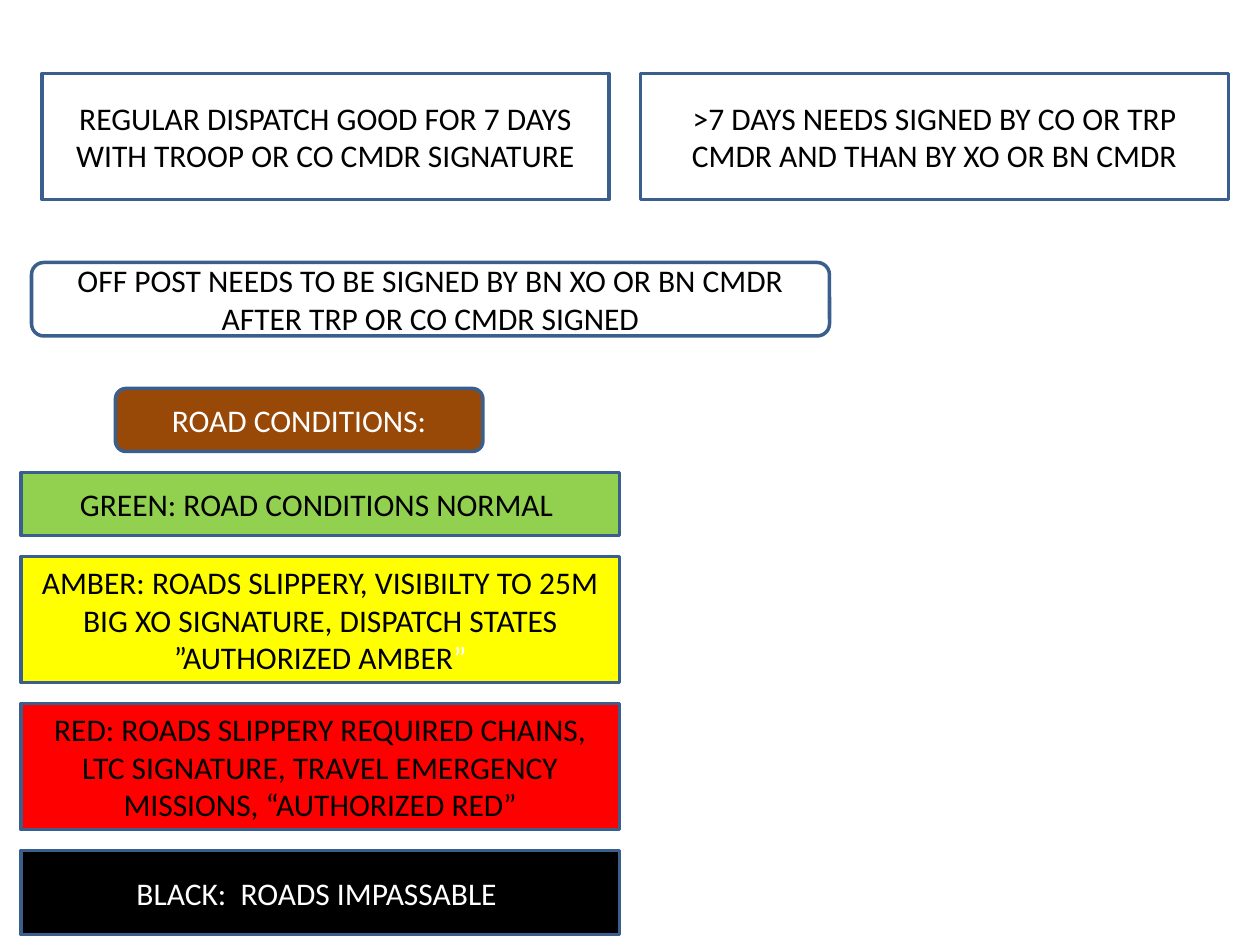
from dataclasses import dataclass
from typing import NamedTuple

from pptx import Presentation
from pptx.dml.color import RGBColor
from pptx.enum.shapes import MSO_SHAPE
from pptx.enum.text import MSO_ANCHOR, PP_ALIGN
from pptx.util import Emu, Pt

EMU_PER_PX = 9525  # 96 px to the inch


@dataclass(frozen=True)
class Theme:
    font: str = "Calibri"
    text_size: int = 18
    line_width: int = 2
    outline: str = "3A5F8C"
    white: str = "FFFFFF"
    black: str = "000000"
    brown: str = "984807"
    green: str = "92D050"
    amber: str = "FFFF00"
    red: str = "FF0000"


THEME = Theme()


class TextRun(NamedTuple):
    text: str
    color: str = THEME.black


Paragraphs = list[list[TextRun]]


class Box(NamedTuple):
    left: int
    top: int
    width: int
    height: int
    fill: str
    paragraphs: Paragraphs
    outline_shape: MSO_SHAPE = MSO_SHAPE.RECTANGLE


class RoadCondition(NamedTuple):
    height: int
    fill: str
    paragraphs: Paragraphs


DISPATCH_RULES = [
    Box(32, 56, 432, 96, THEME.white, [[TextRun(
        "REGULAR DISPATCH GOOD FOR 7 DAYS WITH TROOP OR CO CMDR SIGNATURE")]]),
    Box(488, 56, 448, 96, THEME.white, [[TextRun(
        ">7 DAYS NEEDS SIGNED BY CO OR TRP CMDR AND THAN BY XO OR BN CMDR")]]),
    Box(24, 200, 608, 56, THEME.white, [[TextRun(
        "OFF POST NEEDS TO BE SIGNED BY BN XO OR BN CMDR AFTER TRP OR CO CMDR SIGNED")]],
        MSO_SHAPE.ROUNDED_RECTANGLE),
]
ROAD_HEADING = Box(88, 296, 280, 48, THEME.brown,
                   [[TextRun("ROAD CONDITIONS:", THEME.white)]],
                   MSO_SHAPE.ROUNDED_RECTANGLE)

ROAD_CONDITIONS = [
    RoadCondition(48, THEME.green, [[TextRun("GREEN: ROAD CONDITIONS NORMAL ")]]),
    RoadCondition(96, THEME.amber, [
        [TextRun("AMBER: ROADS SLIPPERY, VISIBILTY TO 25M")],
        [TextRun("BIG XO SIGNATURE, DISPATCH STATES ”AUTHORIZED AMBER"),
         TextRun("”", THEME.white)],
    ]),
    RoadCondition(96, THEME.red, [[TextRun(
        "RED: ROADS SLIPPERY REQUIRED CHAINS, LTC SIGNATURE, "
        "TRAVEL EMERGENCY MISSIONS, “AUTHORIZED RED”")]]),
    RoadCondition(64, THEME.black, [[TextRun("BLACK:  ROADS IMPASSABLE ", THEME.white)]]),
]
ROAD_LEFT, ROAD_TOP, ROAD_WIDTH, ROAD_GAP = 16, 360, 456, 16


def px(length: int) -> Emu:
    return Emu(length * EMU_PER_PX)


def stack_conditions(conditions: list[RoadCondition]) -> list[Box]:
    """Place the conditions in one column with equal gaps."""
    boxes = []
    top = ROAD_TOP
    for condition in conditions:
        boxes.append(Box(ROAD_LEFT, top, ROAD_WIDTH, condition.height,
                         condition.fill, condition.paragraphs))
        top += condition.height + ROAD_GAP
    return boxes


def draw_box(slide, box: Box) -> None:
    shape = slide.shapes.add_shape(box.outline_shape, px(box.left), px(box.top),
                                   px(box.width), px(box.height))
    shape.shadow.inherit = False
    shape.fill.solid()
    shape.fill.fore_color.rgb = RGBColor.from_string(box.fill)
    shape.line.color.rgb = RGBColor.from_string(THEME.outline)
    shape.line.width = Pt(THEME.line_width)

    frame = shape.text_frame
    frame.word_wrap = True
    frame.vertical_anchor = MSO_ANCHOR.MIDDLE
    for index, text_runs in enumerate(box.paragraphs):
        paragraph = frame.add_paragraph() if index else frame.paragraphs[0]
        paragraph.alignment = PP_ALIGN.CENTER
        for text_run in text_runs:
            run = paragraph.add_run()
            run.text = text_run.text
            run.font.name = THEME.font
            run.font.size = Pt(THEME.text_size)
            run.font.color.rgb = RGBColor.from_string(text_run.color)


def main() -> None:
    presentation = Presentation()
    presentation.slide_width = px(960)
    presentation.slide_height = px(720)
    slide = presentation.slides.add_slide(presentation.slide_layouts[6])
    for box in [*DISPATCH_RULES, ROAD_HEADING, *stack_conditions(ROAD_CONDITIONS)]:
        draw_box(slide, box)
    presentation.save("out.pptx")


if __name__ == "__main__":
    main()
